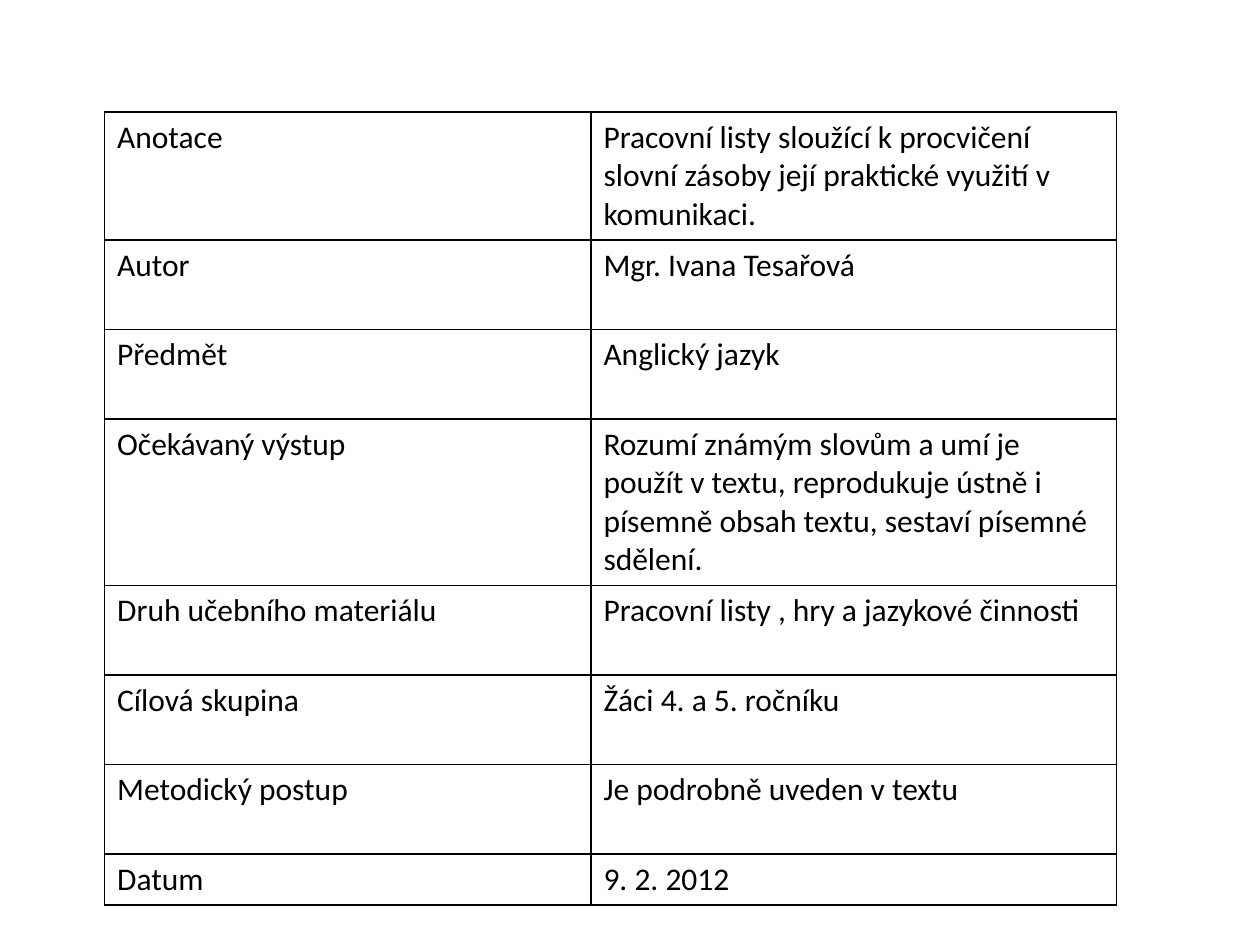
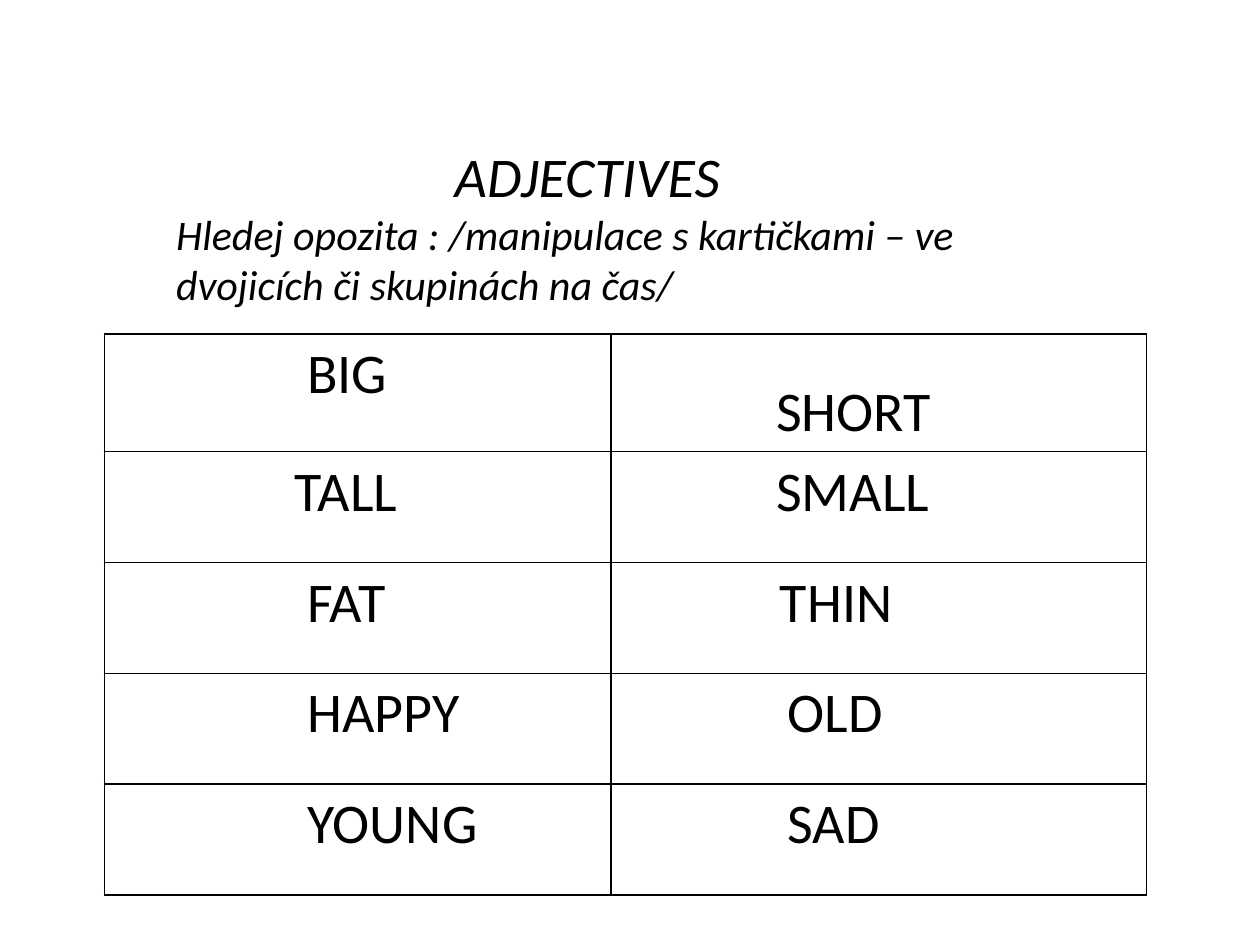
from dataclasses import dataclass

from pptx import Presentation
from pptx.dml.color import RGBColor
from pptx.oxml import parse_xml
from pptx.oxml.ns import nsdecls
from pptx.util import Inches, Pt

BLACK = RGBColor(0x00, 0x00, 0x00)
BODY = {"name": "Calibri", "size": Pt(18)}
CARD = {**BODY, "size": Pt(32)}
HEADING = {**CARD, "italic": True}
TASK = {**HEADING, "size": Pt(24)}
BORDER_SIDES = ("lnL", "lnR", "lnT", "lnB")


@dataclass(frozen=True)
class Entry:
    """A line of text with its left indent and extra space above, in inches."""
    text: str
    indent: float = 0
    drop: float = 0


@dataclass(frozen=True)
class Grid:
    """A bordered table, with lengths in inches."""
    left: float
    top: float
    columns: tuple[float, ...]
    heights: tuple[float, ...]
    rows: tuple[tuple[Entry, ...], ...]
    style: dict


DETAILS = (
    ("Anotace", "Pracovní listy sloužící k procvičení slovní zásoby její praktické "
                "využití v komunikaci."),
    ("Autor", "Mgr. Ivana Tesařová"),
    ("Předmět", "Anglický jazyk"),
    ("Očekávaný výstup", "Rozumí známým slovům a umí je použít v textu, reprodukuje "
                         "ústně i písemně obsah textu, sestaví písemné sdělení."),
    ("Druh učebního materiálu", "Pracovní listy , hry a jazykové činnosti"),
    ("Cílová skupina", "Žáci 4. a 5. ročníku"),
    ("Metodický postup", "Je podrobně uveden v textu"),
    ("Datum", "9. 2. 2012"),
)
DETAIL_GRID = Grid(
    0.83, 0.89, (3.86, 4.17), (0.71,) * 7 + (0.38,),
    tuple(tuple(Entry(text) for text in row) for row in DETAILS), BODY,
)
CARD_GRID = Grid(
    0.83, 2.65, (4.02, 4.25), (0.88,) * 5,
    (
        (Entry("BIG", 1.51), Entry("SHORT", 1.21, 0.3)),
        (Entry("TALL", 1.41), Entry("SMALL", 1.21)),
        (Entry("FAT", 1.51), Entry("THIN", 1.24)),
        (Entry("HAPPY", 1.51), Entry("OLD", 1.3)),
        (Entry("YOUNG", 1.51), Entry("SAD", 1.3)),
    ),
    CARD,
)


def write(p, entry: Entry, style: dict) -> None:
    """Write one entry into a paragraph."""
    r = p.add_run()
    r.text = entry.text
    for name, value in style.items():
        setattr(r.font, name, value)
    r.font.color.rgb = BLACK
    p._p.get_or_add_pPr().set("marL", str(Inches(entry.indent)))


def outline(cell) -> None:
    """Give a cell thin black borders and no fill."""
    tcPr = cell._tc.get_or_add_tcPr()
    for side in BORDER_SIDES:
        tcPr.append(parse_xml(
            f'<a:{side} {nsdecls("a")} w="{Pt(1)}"><a:solidFill>'
            f'<a:srgbClr val="{BLACK}"/></a:solidFill></a:{side}>'
        ))
    cell.fill.background()


def add_grid(s, grid: Grid) -> None:
    """Draw a bordered table on a slide."""
    table = s.shapes.add_table(
        len(grid.rows), len(grid.columns), Inches(grid.left), Inches(grid.top),
        Inches(sum(grid.columns)), Inches(sum(grid.heights)),
    ).table
    table.first_row = table.horz_banding = False
    for column, width in zip(table.columns, grid.columns):
        column.width = Inches(width)
    for row, height, entries in zip(table.rows, grid.heights, grid.rows):
        row.height = Inches(height)
        for cell, entry in zip(row.cells, entries):
            outline(cell)
            cell.margin_top = Inches(0.05 + entry.drop)
            write(cell.text_frame.paragraphs[0], entry, grid.style)


def add_intro(s) -> None:
    """Add the heading and the task above the word cards."""
    sp = s.shapes.add_textbox(Inches(1.3), Inches(1.07), Inches(6.61), Inches(1.85))
    tf = sp.text_frame
    tf.word_wrap = True
    write(tf.paragraphs[0], Entry("ADJECTIVES", 2.21), HEADING)
    task = "Hledej opozita : /manipulace s kartičkami – ve dvojicích či skupinách na čas/"
    write(tf.add_paragraph(), Entry(task), TASK)


def main() -> None:
    """Build and save the presentation."""
    prs = Presentation()
    prs.slide_width, prs.slide_height = Inches(10), Inches(7.5)
    blank = prs.slide_layouts[6]
    add_grid(prs.slides.add_slide(blank), DETAIL_GRID)
    s = prs.slides.add_slide(blank)
    add_intro(s)
    add_grid(s, CARD_GRID)
    prs.save("out.pptx")


if __name__ == "__main__":
    main()
